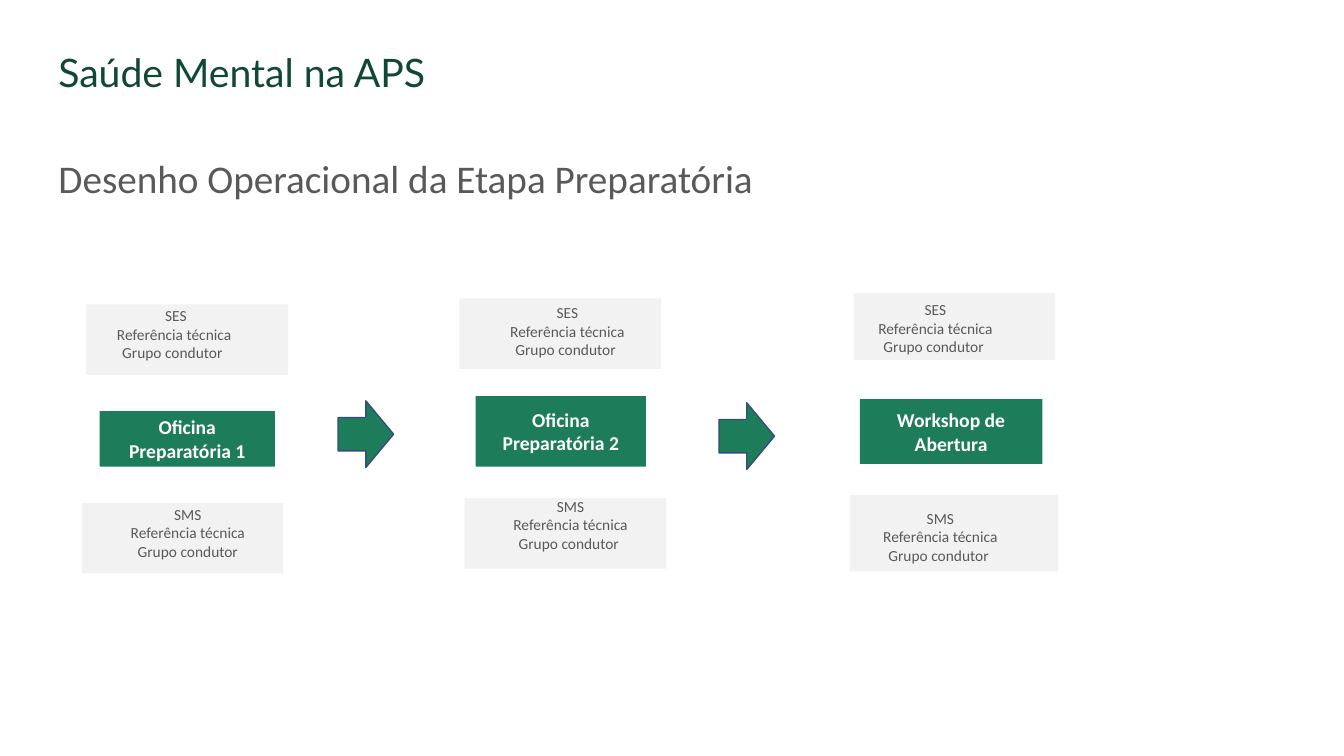
"""Build the slide on the operational design of the preparatory stage."""
import pptx
import pptx.util
import pptx.dml.color
import pptx.enum.shapes
import pptx.enum.text

Cm = pptx.util.Cm
RGBColor = pptx.dml.color.RGBColor
Shape = pptx.enum.shapes.MSO_SHAPE
Align = pptx.enum.text.PP_ALIGN
Anchor = pptx.enum.text.MSO_ANCHOR

DARK_GREEN = RGBColor(0x11, 0x48, 0x34)
GREEN = RGBColor(0x1D, 0x7D, 0x5B)
NAVY = RGBColor(0x37, 0x4B, 0x7F)
GREY = RGBColor(0x59, 0x59, 0x59)
PALE = RGBColor(0xF2, 0xF2, 0xF2)
WHITE = RGBColor(0xFF, 0xFF, 0xFF)

PROGRAMME = "Saúde Mental na APS"
HEADING = "Desenho Operacional da Etapa Preparatória"
ROLES = ["Referência técnica", "Grupo condutor "]

# Each box is left, top, width, height in centimetres.
STEPS = [
    ("Oficina Preparatória 1", (2.51, 10.36, 4.42, 1.4)),
    ("Oficina Preparatória 2", (11.99, 9.98, 4.29, 1.78)),
    ("Workshop de Abertura", (21.67, 10.06, 4.6, 1.63)),
]
TEAMS = [
    ([" SES"] + ROLES, (2.18, 7.67, 5.08, 1.78), (1.85, 7.59, 5.08, 1.68)),
    (["SES"] + ROLES, (11.58, 7.52, 5.08, 1.78), (11.81, 7.52, 4.98, 1.68)),
    (["SES"] + ROLES, (21.51, 7.39, 5.08, 1.68), (21.06, 7.44, 5.03, 1.68)),
    (["SMS", "Referência técnica", "Grupo condutor"],
     (2.06, 12.67, 5.08, 1.78), (2.18, 12.6, 5.11, 1.68)),
    (["SMS"] + ROLES, (11.71, 12.55, 5.08, 1.78), (11.89, 12.4, 4.98, 1.68)),
    (["SMS"] + ROLES, (21.41, 12.47, 5.26, 1.93), (21.16, 12.7, 5.08, 1.68)),
]
ARROWS = [(8.38, 10.24, 1.68, 1.4), (17.98, 10.29, 1.68, 1.4)]


def lengths(box):
    """Turn a box in centimetres into slide lengths."""
    return [Cm(value) for value in box]


def write(frame, lines, size, color, align, font="Calibri", bold=False):
    """Write one paragraph per line into a text frame."""
    frame.word_wrap = True
    for index, line in enumerate(lines):
        paragraph = frame.add_paragraph() if index else frame.paragraphs[0]
        paragraph.alignment = align
        run = paragraph.add_run()
        run.text = line
        run.font.name = font
        run.font.size = pptx.util.Pt(size)
        run.font.bold = bold
        run.font.color.rgb = color


def add_filled(slide, preset, box, fill):
    """Add a flat shape without an outline."""
    shape = slide.shapes.add_shape(preset, *lengths(box))
    shape.shadow.inherit = False
    shape.fill.solid()
    shape.fill.fore_color.rgb = fill
    shape.line.fill.background()
    return shape


def main():
    """Compose and save the slide."""
    deck = pptx.Presentation()
    deck.slide_width, deck.slide_height = Cm(33.87), Cm(19.05)
    slide = deck.slides.add_slide(deck.slide_layouts[5])

    heading = slide.shapes.title
    heading.left, heading.top, heading.width, heading.height = lengths(
        (1.22, 2.72, 27.91, 3.68))
    write(heading.text_frame, [HEADING], 28, GREY, Align.LEFT)
    heading.text_frame.vertical_anchor = Anchor.MIDDLE
    heading.text_frame.auto_size = pptx.enum.text.MSO_AUTO_SIZE.NONE
    heading.text_frame.paragraphs[0].line_spacing = 0.9

    programme = slide.shapes.add_textbox(*lengths((1.22, 1.09, 17.98, 1.45)))
    write(programme.text_frame, [PROGRAMME], 28, DARK_GREEN, Align.LEFT, "Lato")

    for members, panel_box, label_box in TEAMS:
        add_filled(slide, Shape.RECTANGLE, panel_box, PALE)
        label = slide.shapes.add_textbox(*lengths(label_box))
        write(label.text_frame, members, 11, GREY, Align.CENTER)

    for name, box in STEPS:
        step = add_filled(slide, Shape.RECTANGLE, box, GREEN)
        step.text_frame.vertical_anchor = Anchor.MIDDLE
        write(step.text_frame, [name], 14, WHITE, Align.CENTER, bold=True)

    for box in ARROWS:
        arrow = add_filled(slide, Shape.DOWN_ARROW, box, GREEN)
        arrow.rotation = 270
        arrow.line.color.rgb = NAVY
        arrow.line.width = pptx.util.Pt(1)

    deck.save("out.pptx")


if __name__ == "__main__":
    main()
